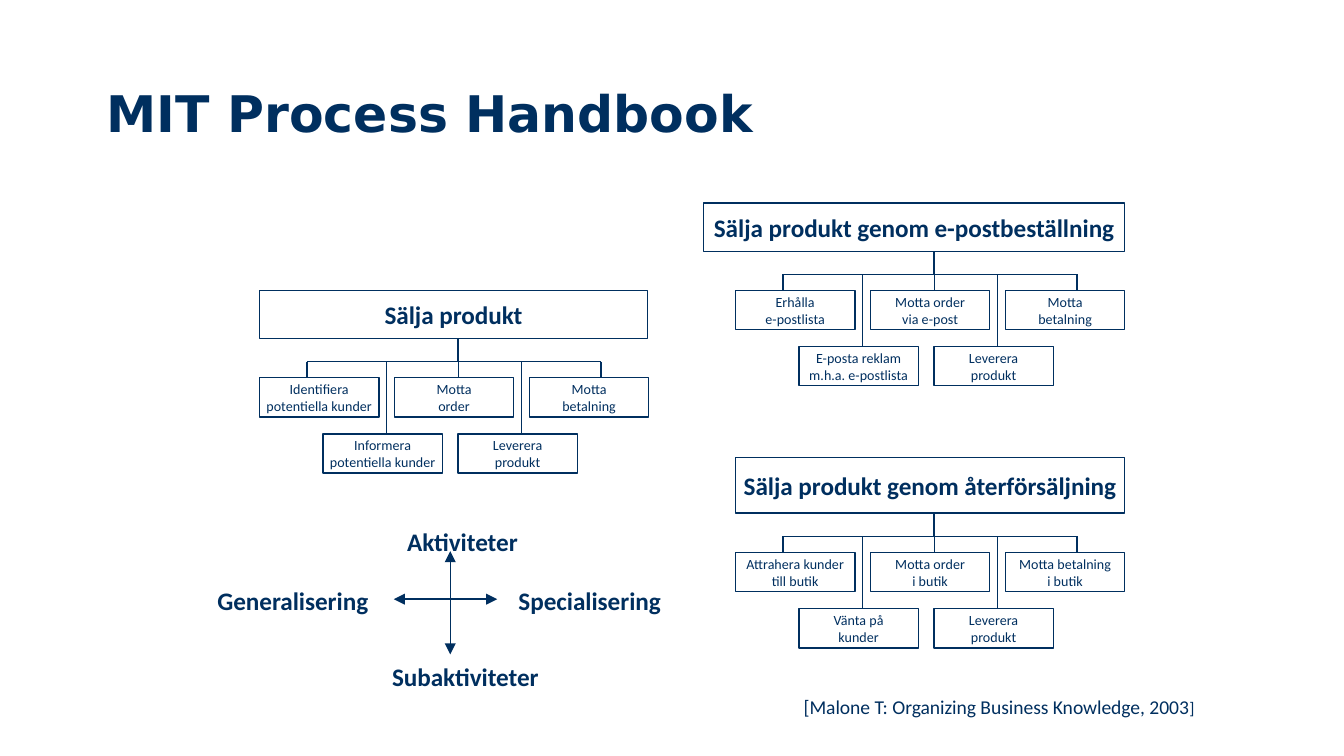
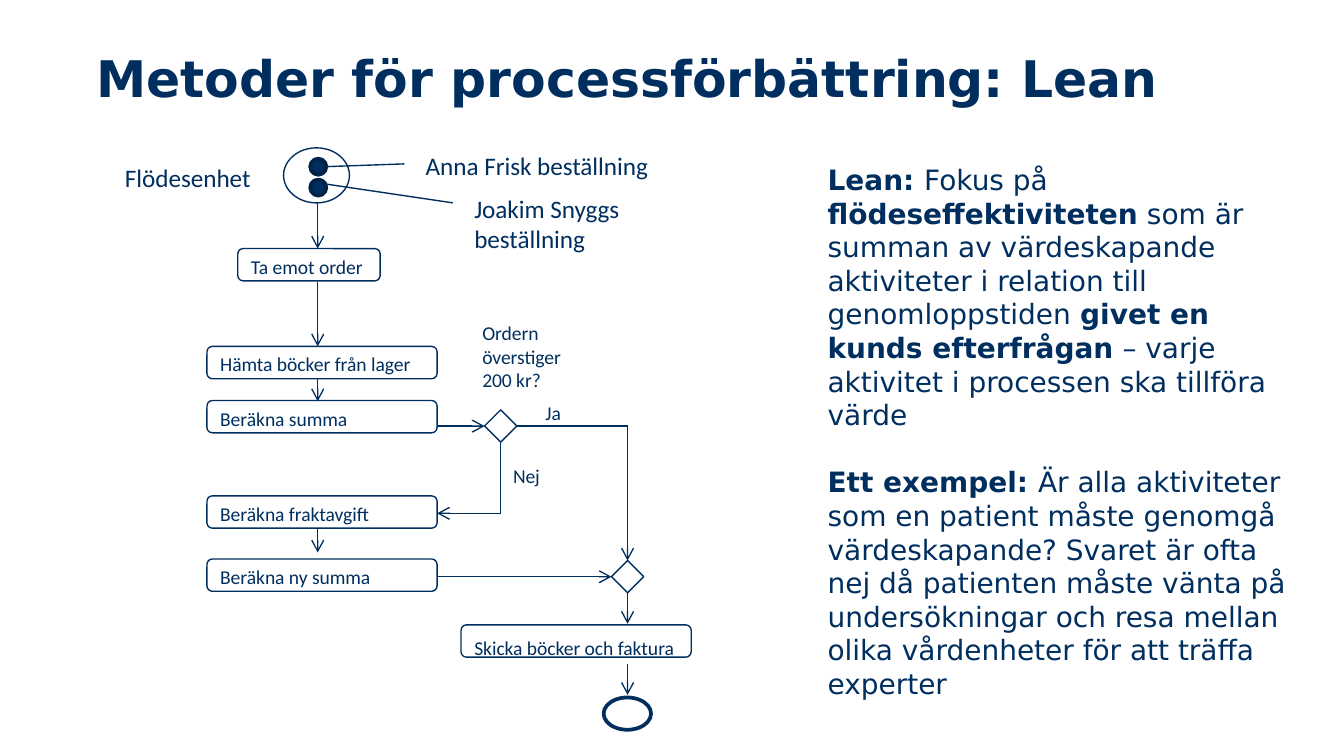
from lxml import etree
from pptx import Presentation
from pptx.dml.color import RGBColor
from pptx.enum.shapes import MSO_CONNECTOR, MSO_SHAPE
from pptx.enum.text import MSO_ANCHOR, PP_ALIGN
from pptx.oxml.ns import qn
from pptx.util import Pt

NAVY = RGBColor(0x00, 0x2F, 0x5F)
DARK_NAVY = RGBColor(0x00, 0x23, 0x46)
POINTER_NAVY = RGBColor(0x00, 0x2E, 0x5D)
WHITE = RGBColor(0xFF, 0xFF, 0xFF)
BODY_FONT = "Calibri"
TITLE_FONT = "DejaVu Sans"
RECTANGLE = MSO_SHAPE.RECTANGLE
ROUNDED = MSO_SHAPE.ROUNDED_RECTANGLE
DIAMOND = MSO_SHAPE.DIAMOND
OVAL = MSO_SHAPE.OVAL
STRAIGHT = MSO_CONNECTOR.STRAIGHT
LEFT, CENTER = PP_ALIGN.LEFT, PP_ALIGN.CENTER
TOP, MIDDLE = MSO_ANCHOR.TOP, MSO_ANCHOR.MIDDLE
TITLE_STYLE = dict(size=27, bold=True, font=TITLE_FONT, insets=(5.4, 6))


def add_text(slide, text, left, top, width, height, *, kind=None, fill=WHITE,
             outline=NAVY, outline_width=0.75, size=10.5, bold=False,
             font=BODY_FONT, spacing=None, gap=0, insets=(7.2, 3.6)):
    """Add a text box, or a filled shape when kind is given; ** toggles bold."""
    frame_size = Pt(left), Pt(top), Pt(width), Pt(height)
    if kind is None:
        shape = slide.shapes.add_textbox(*frame_size)
    else:
        shape = slide.shapes.add_shape(kind, *frame_size)
        shape.shadow.inherit = False
        shape.fill.solid()
        shape.fill.fore_color.rgb = fill
        shape.line.color.rgb = outline
        shape.line.width = Pt(outline_width)
    frame = shape.text_frame
    frame.word_wrap = kind is None
    frame.vertical_anchor = TOP if kind is None else MIDDLE
    frame.margin_left = frame.margin_right = Pt(insets[0])
    frame.margin_top = frame.margin_bottom = Pt(insets[1])
    if not text:
        return shape
    for number, paragraph_text in enumerate(text.split("\n\n")):
        paragraph = frame.add_paragraph() if number else frame.paragraphs[0]
        paragraph.alignment = LEFT if kind is None else CENTER
        if number:
            paragraph.space_before = Pt(gap)
        if spacing:
            paragraph.line_spacing = spacing
        for part_number, part in enumerate(paragraph_text.split("**")):
            for row_number, row in enumerate(part.split("\n")):
                if row_number:
                    paragraph.add_line_break()
                    line_break = paragraph._p.findall(qn("a:br"))[-1]
                    etree.SubElement(line_break, qn("a:rPr"), sz=str(int(size * 100)))
                if row:
                    run = paragraph.add_run()
                    run.text = row
                    run.font.size = Pt(size)
                    run.font.name = font
                    run.font.bold = bold or part_number % 2 == 1
                    run.font.color.rgb = NAVY
    return shape


def add_line(slide, start_x, start_y, end_x, end_y, *, color=NAVY, width=0.75,
             head=None, tail=None):
    connector = slide.shapes.add_connector(
        STRAIGHT, Pt(start_x), Pt(start_y), Pt(end_x), Pt(end_y))
    connector.line.color.rgb = color
    connector.line.width = Pt(width)
    properties = connector._element.spPr
    outline = properties.find(qn("a:ln"))
    for tag, arrow in (("a:headEnd", head), ("a:tailEnd", tail)):
        if arrow:
            etree.SubElement(outline, qn(tag), type=arrow)
    etree.SubElement(properties, qn("a:effectLst"))


presentation = Presentation()
presentation.slide_width = Pt(720)
presentation.slide_height = Pt(405)
blank_layout = presentation.slide_layouts[6]

handbook = presentation.slides.add_slide(blank_layout)
add_text(handbook, "MIT Process Handbook", 51.8, 38.2, 539, 47, **TITLE_STYLE)

process_trees = [
    ("Sälja produkt", (139, 155.5, 208, 26), 139, 202.4,
     ["Identifiera\npotentiella kunder", "Informera\npotentiella kunder",
      "Motta\norder", "Leverera\nprodukt", "Motta\nbetalning"]),
    ("Sälja produkt genom e-postbeställning", (377, 108.7, 225.5, 26), 394, 155.6,
     ["Erhålla\ne-postlista", "E-posta reklam\nm.h.a. e-postlista",
      "Motta order\nvia e-post", "Leverera\nprodukt", "Motta\nbetalning"]),
    ("Sälja produkt genom återförsäljning", (394, 245, 208.5, 29.8), 394, 296,
     ["Attrahera kunder\ntill butik", "Vänta på\nkunder",
      "Motta order\ni butik", "Leverera\nprodukt", "Motta betalning\ni butik"]),
]
step_offsets = [0, 34, 72.3, 106.3, 144.6]
branch_offsets = [25.4, 68.2, 106.3, 140.5, 183]
row_drop = 30.1
for heading, heading_place, left, row_top, steps in process_trees:
    add_text(handbook, heading, *heading_place, kind=RECTANGLE, size=13.5, bold=True)
    bar = row_top - 8.6
    trunk = left + branch_offsets[2]
    add_line(handbook, left + branch_offsets[0], bar, left + branch_offsets[-1], bar)
    add_line(handbook, trunk, heading_place[1] + heading_place[3], trunk, bar)
    for number, step in enumerate(steps):
        step_top = row_top + row_drop * (number % 2)
        branch = left + branch_offsets[number]
        add_text(handbook, step, left + step_offsets[number], step_top, 64, 21,
                 kind=RECTANGLE, size=7.5)
        add_line(handbook, branch, bar, branch, step_top,
                 width=0.25 if number == 2 else 0.75)

for axis in [(211, 321, 266.4, 321), (241.2, 350.6, 241.2, 295.2)]:
    add_line(handbook, *axis, head="triangle", tail="triangle")
for label, left, top, width in [
    ("Generalisering", 109.4, 310.3, 106.6),
    ("Specialisering", 270.7, 310.3, 111),
    ("Aktiviteter", 211, 278.6, 80.6),
    ("Subaktiviteter", 203, 350.6, 98),
]:
    add_text(handbook, label, left, top, width, 23.8, size=13.5, bold=True)
citation = add_text(handbook, "[Malone T: Organizing Business Knowledge, 2003**]",
                    423.4, 368.6, 229.7, 20)
bracket = citation.text_frame.paragraphs[0].runs[-1]
bracket.font.size = Pt(9)
bracket.font.bold = False

lean = presentation.slides.add_slide(blank_layout)
add_text(lean, "Metoder för processförbättring: Lean", 46.1, 19.4, 585.4, 67.7,
         **TITLE_STYLE)

for label, left, top, width, label_drop, spacing in [
    ("Ta emot order", 127.4, 133.2, 76.3, 4.3, 0.6),
    ("Hämta böcker från lager", 110.9, 185.6, 123.3, 1.6, 0.8),
    ("Beräkna summa", 110.9, 214.6, 123.3, 2.1, 0.8),
    ("Beräkna fraktavgift", 110.9, 265.7, 123.3, 2.1, 0.8),
    ("Beräkna ny summa", 110.9, 299.5, 123.3, 2.1, 0.8),
    ("Skicka böcker och faktura", 247, 334.8, 123.3, 5, 0.8),
]:
    add_text(lean, "", left, top, width, 17.3, kind=ROUNDED)
    add_text(lean, label, left, top + label_drop, width + 2, 17.3, spacing=spacing)

for kind, left, top, width, height in [
    (DIAMOND, 259.6, 219.6, 17.3, 17.3),
    (DIAMOND, 327.6, 300.3, 17.3, 17.3),
    (OVAL, 151.9, 79.2, 35.3, 29.5),
]:
    add_text(lean, "", left, top, width, height, kind=kind)
add_text(lean, "", 323.4, 373.7, 25.4, 17.3, kind=OVAL, outline_width=2)
for dot_top in (85, 96.2):
    add_text(lean, "", 166.2, dot_top, 8.6, 8.6, kind=OVAL, fill=NAVY,
             outline=DARK_NAVY, outline_width=2)

main_x, decision_x, merge_x = 170.2, 268.2, 336.2
for arrow in [
    (main_x, 108.7, main_x, 133.2),
    (main_x, 151.2, main_x, 185.6),
    (main_x, 202.6, main_x, 215),
    (main_x, 283, main_x, 296),
    (234.2, 228.3, 259.6, 228.3),
    (merge_x, 228.3, merge_x, 300.3),
    (decision_x, 275, 234.2, 275),
    (234.2, 309, 327.6, 309),
    (merge_x, 317.6, merge_x, 334.2),
    (merge_x, 355.7, merge_x, 372.3),
]:
    add_line(lean, *arrow, tail="arrow")
add_line(lean, 276.8, 228.3, merge_x, 228.3)
add_line(lean, decision_x, 236.9, decision_x, 275)
for pointer in [(174.5, 89.3, 216.7, 87.8), (174.5, 98.6, 242.6, 108.7)]:
    add_line(lean, *pointer, color=POINTER_NAVY)

for label, left, top, width, height, size in [
    ("Flödesenhet", 59.8, 83.5, 85, 23.8, 13.5),
    ("Anna Frisk beställning", 221, 77, 170, 23.8, 13.5),
    ("Joakim Snyggs beställning", 247, 100.1, 111, 40.3, 13.5),
    ("Ordern överstiger 200 kr?", 251.3, 168.5, 59.8, 45.4, 10.5),
    ("Ja", 285.1, 211, 59.8, 20, 10.5),
    ("Nej", 267.8, 244.8, 59.8, 20, 10.5),
]:
    add_text(lean, label, left, top, width, height, size=size)

lean_text = (
    "**Lean: **Fokus på **flödeseffektiviteten** som är summan av värdeskapande "
    "aktiviteter i relation till genomloppstiden **givet en kunds efterfrågan** "
    "– varje aktivitet i processen ska tillföra värde\n\n"
    "**Ett exempel: **Är alla aktiviteter som en patient måste genomgå "
    "värdeskapande? Svaret är ofta nej då patienten måste vänta på "
    "undersökningar och resa mellan olika vårdenheter för att träffa experter"
)
add_text(lean, lean_text, 436.3, 83.5, 271.4, 310, size=15, font=TITLE_FONT, gap=18)

presentation.save("out.pptx")
